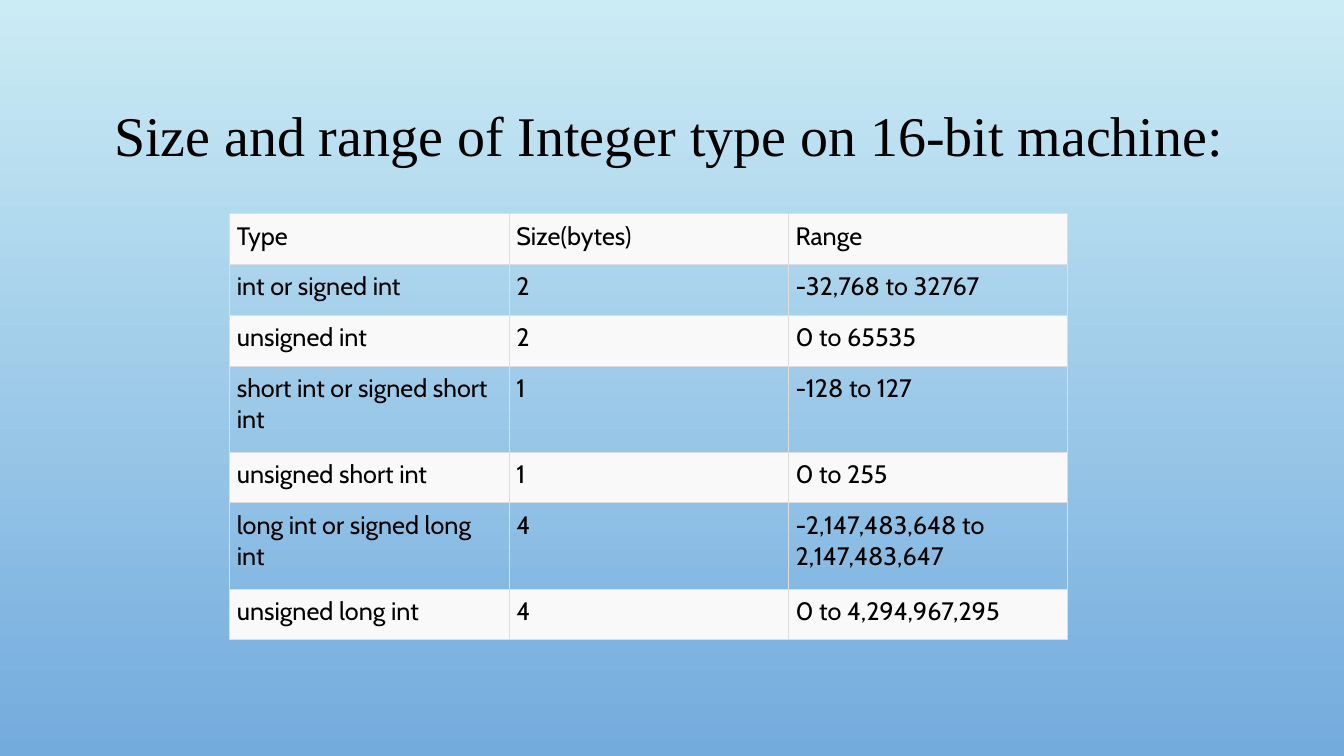
from lxml import etree
from pptx import Presentation
from pptx.dml.color import RGBColor
from pptx.enum.text import MSO_ANCHOR, MSO_AUTO_SIZE, PP_ALIGN
from pptx.oxml.ns import qn
from pptx.util import Cm, Pt

LEFT, MIDDLE = PP_ALIGN.LEFT, MSO_ANCHOR.MIDDLE
NO_AUTOFIT = MSO_AUTO_SIZE.NONE
BLACK = RGBColor(0x00, 0x00, 0x00)
SKY = RGBColor(0xCB, 0xEC, 0xF5)
BLUE = RGBColor(0x73, 0xAB, 0xDD)
BAND = RGBColor(0xF9, 0xF9, 0xF9)
BORDER = RGBColor(0xDD, 0xDD, 0xDD)

TITLE = "Size and range of Integer type on 16-bit machine:"
ROWS = [
    ("Type", "Size(bytes)", "Range"),
    ("int or signed int", "2", "-32,768 to 32767"),
    ("unsigned int", "2", "0 to 65535"),
    ("short int or signed short int", "1", "-128 to 127"),
    ("unsigned short int", "1", "0 to 255"),
    ("long int or signed long int", "4", "-2,147,483,648 to 2,147,483,647"),
    ("unsigned long int", "4", "0 to 4,294,967,295"),
]
TALL_ROWS = (3, 5)


class Deck:
    """Holds the text styles and the current slide."""

    title_font = {"name": "Times New Roman", "size": Pt(40), "bold": False}
    cell_font = {"name": "Cabin", "size": Pt(18), "bold": False}
    cell_margins = {f"margin_{side}": Cm(0.18)
                    for side in ("left", "top", "right", "bottom")}

    def __init__(self):
        """Start a widescreen presentation with one title-only slide."""
        self.prs = Presentation()
        self.prs.slide_width, self.prs.slide_height = Cm(33.87), Cm(19.05)
        self.s = self.prs.slides.add_slide(self.prs.slide_layouts[5])

    def background(self, top, bottom):
        """Fill the slide with a vertical gradient."""
        fill = self.s.background.fill
        fill.gradient()
        fill.gradient_angle = 270
        for stop, color in zip(fill.gradient_stops, (top, bottom)):
            stop.color.rgb = color

    def text(self, tf, text, font):
        """Put one left-aligned black paragraph in a text frame."""
        p = tf.paragraphs[0]
        p.alignment = LEFT
        r = p.add_run()
        r.text = text
        for key, value in font.items():
            setattr(r.font, key, value)
        r.font.color.rgb = BLACK

    def title(self, text, left, top, width, height):
        """Place and format the title placeholder."""
        sp = self.s.shapes.title
        sp.left, sp.top, sp.width, sp.height = left, top, width, height
        tf = sp.text_frame
        layout = {"word_wrap": True, "auto_size": NO_AUTOFIT,
                  "vertical_anchor": MIDDLE}
        for key, value in layout.items():
            setattr(tf, key, value)
        self.text(tf, text, self.title_font)

    def borders(self, cell):
        """Draw a thin line on each side of a cell."""
        tcPr = cell._tc.get_or_add_tcPr()
        for side in ("a:lnL", "a:lnR", "a:lnT", "a:lnB"):
            ln = etree.SubElement(tcPr, qn(side), w=str(Pt(0.6)))
            fill = etree.SubElement(ln, qn("a:solidFill"))
            etree.SubElement(fill, qn("a:srgbClr"), val=str(BORDER))

    def cell(self, cell, text, banded):
        """Fill, frame and label one table cell."""
        for key, value in self.cell_margins.items():
            setattr(cell, key, value)
        self.borders(cell)
        if banded:
            cell.fill.solid()
            cell.fill.fore_color.rgb = BAND
        else:
            cell.fill.background()
        self.text(cell.text_frame, text, self.cell_font)

    def table(self, rows, left, top, col_width, row_height, tall_height):
        """Add a table whose even rows are banded."""
        count = len(rows[0])
        height = row_height * len(rows) + (tall_height - row_height) * len(TALL_ROWS)
        table = self.s.shapes.add_table(
            len(rows), count, left, top, col_width * count, height).table
        table.first_row = table.horz_banding = False
        for column in table.columns:
            column.width = col_width
        for i, row in enumerate(rows):
            table.rows[i].height = tall_height if i in TALL_ROWS else row_height
            for j, text in enumerate(row):
                self.cell(table.cell(i, j), text, i % 2 == 0)


def main():
    """Build and save the slide."""
    deck = Deck()
    deck.background(SKY, BLUE)
    deck.title(TITLE, Cm(2.62), Cm(2.41), Cm(29.57), Cm(1.96))
    deck.table(ROWS, Cm(5.79), Cm(5.38), Cm(7.04), Cm(1.28), Cm(2.17))
    deck.prs.save("out.pptx")


if __name__ == "__main__":
    main()
